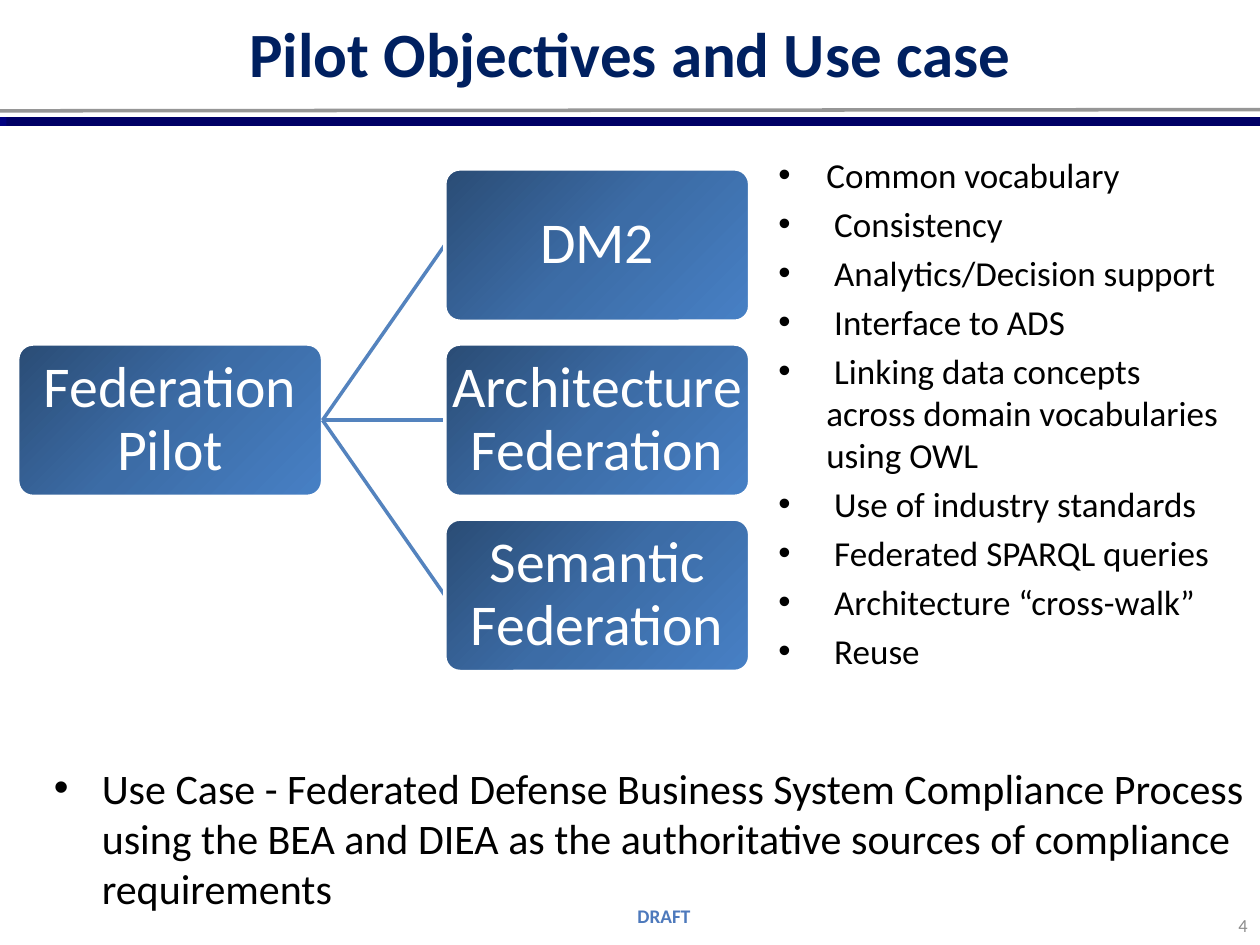
"""Build the pilot objectives slide with its federation tree and bullet lists."""
from dataclasses import dataclass, field

from lxml import etree
from pptx import Presentation
from pptx.dml.color import RGBColor
from pptx.enum.shapes import MSO_CONNECTOR, MSO_SHAPE
from pptx.enum.text import MSO_ANCHOR, PP_ALIGN
from pptx.oxml.ns import qn
from pptx.util import Inches, Pt

RECTANGLE, ROUNDED = MSO_SHAPE.RECTANGLE, MSO_SHAPE.ROUNDED_RECTANGLE
STRAIGHT = MSO_CONNECTOR.STRAIGHT
LEFT, CENTER, RIGHT = PP_ALIGN.LEFT, PP_ALIGN.CENTER, PP_ALIGN.RIGHT
TOP, MIDDLE = MSO_ANCHOR.TOP, MSO_ANCHOR.MIDDLE
LEFT_SIDE, RIGHT_SIDE = 1, 3

WIDTH, HEIGHT = Inches(10), Inches(7.5)
FONT = "Calibri"
COLORS = {
    "title": "002060", "text": "000000", "white": "FFFFFF", "draft": "4D79BC",
    "number": "8C8C8C", "rule": "969696", "bar": "000080", "bar_front": "000066",
    "link": "5483BE",
}
NODE_GRADIENT = {0: "2A4C75", 50: "3C6CA6", 100: "4780C5"}
HANGING = Inches(0.38)
NODE_INSETS = dict.fromkeys(
    ("margin_left", "margin_top", "margin_right", "margin_bottom"), Inches(0.02))


@dataclass(frozen=True)
class Area:
    """Place and size as percentages of the slide."""
    left: float
    top: float
    width: float
    height: float

    def lengths(self) -> tuple:
        """Return left, top, width and height in slide units."""
        return (across(self.left), down(self.top), across(self.width), down(self.height))


@dataclass(frozen=True)
class Label:
    """A block of text with its place and look."""
    area: Area
    lines: tuple
    size: float
    color: str
    bold: bool = False
    align: PP_ALIGN = LEFT
    anchor: MSO_ANCHOR = TOP
    bulleted: bool = False


@dataclass(frozen=True)
class Node:
    """A box of the tree at a column and row of its grid."""
    text: str
    column: int
    row: int
    frame: dict = field(default_factory=lambda: NODE_INSETS)

    def area(self) -> Area:
        """Return the place of the box on the slide."""
        return Area(1.4 + 33.9 * self.column, 17.87 + 18.53 * self.row, 24.2, 16.13)


BARS = ((Area(0, 12.4, 100, 0.93), "bar"), (Area(0.5, 12.4, 99.5, 0.93), "bar_front"))
ROOT = Node("Federation Pilot", 0, 1)
BRANCHES = [Node(text, 1, row) for row, text in enumerate(
    ("DM2", "Architecture Federation", "Semantic Federation"))]
LABELS = (
    Label(Area(39.2, 95.07, 27, 3.87), ("DRAFT",), 11, "draft", True, CENTER),
    Label(Area(0, 0, 100, 11.07), ("Pilot Objectives and Use case",), 36, "title",
          True, CENTER, MIDDLE),
    Label(Area(76.7, 95.73, 23.3, 4.27), ("4",), 10.5, "number", False, RIGHT, MIDDLE),
    Label(Area(60.8, 15.6, 37.5, 61.87), (
        "Common vocabulary",
        " Consistency",
        " Analytics/Decision support",
        " Interface to ADS",
        " Linking data concepts across domain vocabularies using OWL",
        " Use of industry standards",
        " Federated SPARQL queries",
        " Architecture “cross-walk”",
        " Reuse",
    ), 20, "text", bulleted=True),
    Label(Area(3.3, 80, 96.7, 20), (
        "Use Case - Federated Defense Business System Compliance Process using the BEA "
        "and DIEA as the authoritative sources of compliance requirements",
    ), 24, "text", bulleted=True),
)


def across(percent: float) -> int:
    """Convert a share of the slide width."""
    return round(WIDTH * percent / 100)


def down(percent: float) -> int:
    """Convert a share of the slide height."""
    return round(HEIGHT * percent / 100)


def rgb(name: str) -> RGBColor:
    """Look up a named colour."""
    return RGBColor.from_string(COLORS[name])


def apply(target: object, values: dict) -> None:
    """Set each format value on the target."""
    for name, value in values.items():
        setattr(target, name, value)


def write_run(paragraph, text: str, size: float, color: str, bold: bool = False) -> None:
    """Add one formatted run to a paragraph."""
    run = paragraph.add_run()
    run.text = text
    apply(run.font, {"name": FONT, "size": Pt(size), "bold": bold})
    run.font.color.rgb = rgb(color)


def add_bullet(paragraph) -> None:
    """Give a paragraph a round bullet and a hanging indent."""
    properties = paragraph._p.get_or_add_pPr()
    properties.set("marL", str(HANGING))
    properties.set("indent", str(-HANGING))
    etree.SubElement(properties, qn("a:buFont"), typeface="Arial")
    etree.SubElement(properties, qn("a:buChar"), char="•")


def add_label(slide, label: Label) -> None:
    """Draw a text box."""
    frame = slide.shapes.add_textbox(*label.area.lengths()).text_frame
    apply(frame, {"word_wrap": True, "vertical_anchor": label.anchor})
    for index, line in enumerate(label.lines):
        paragraph = frame.add_paragraph() if index else frame.paragraphs[0]
        if label.bulleted:
            add_bullet(paragraph)
        apply(paragraph, {"alignment": label.align,
                          "space_before": Pt(label.size * 0.2 if index else 0)})
        write_run(paragraph, line, label.size, label.color, label.bold)


def add_bar(slide, area: Area, color: str) -> None:
    """Draw a plain filled bar."""
    shape = slide.shapes.add_shape(RECTANGLE, *area.lengths())
    shape.shadow.inherit = False
    shape.fill.solid()
    shape.fill.fore_color.rgb = rgb(color)
    shape.line.fill.background()


def add_line(slide, ends: tuple, color: str):
    """Draw a straight connector without a shadow."""
    connector = slide.shapes.add_connector(STRAIGHT, *ends)
    apply(connector.line, {"width": Pt(2)})
    connector.line.color.rgb = rgb(color)
    etree.SubElement(connector._element.spPr, qn("a:effectLst"))
    return connector


def fill_gradient(shape) -> None:
    """Fill a shape with the diagonal node gradient."""
    shape.fill.gradient()
    gradient = shape._element.spPr.find(qn("a:gradFill"))
    stops = gradient.find(qn("a:gsLst"))
    for stop in list(stops):
        stops.remove(stop)
    for position, color in NODE_GRADIENT.items():
        stop = etree.SubElement(stops, qn("a:gs"), pos=str(position * 1000))
        etree.SubElement(stop, qn("a:srgbClr"), val=color)
    shape.fill.gradient_angle = 315


def add_node(slide, node: Node):
    """Draw one box of the tree."""
    shape = slide.shapes.add_shape(ROUNDED, *node.area().lengths())
    shape.adjustments[0] = 0.1
    shape.shadow.inherit = False
    fill_gradient(shape)
    shape.line.color.rgb = rgb("white")
    shape.line.width = Pt(2)
    frame = shape.text_frame
    apply(frame, {"word_wrap": True, "vertical_anchor": MIDDLE, **node.frame})
    paragraph = frame.paragraphs[0]
    apply(paragraph, {"alignment": CENTER, "line_spacing": 0.9})
    write_run(paragraph, node.text, 33, "white")
    return shape


def add_tree(slide) -> None:
    """Draw the root, its branches and the links behind them."""
    root = add_node(slide, ROOT)
    for branch in BRANCHES:
        shape = add_node(slide, branch)
        link = add_line(slide, (0, 0, 0, 0), "link")
        link.begin_connect(root, RIGHT_SIDE)
        link.end_connect(shape, LEFT_SIDE)
        shape._element.addprevious(link._element)


def main() -> None:
    """Build and save the presentation."""
    presentation = Presentation()
    apply(presentation, {"slide_width": WIDTH, "slide_height": HEIGHT})
    slide = presentation.slides.add_slide(presentation.slide_layouts[6])
    add_line(slide, (across(100), down(11.6), 0, down(11.73)), "rule")
    for area, color in BARS:
        add_bar(slide, area, color)
    add_tree(slide)
    for label in LABELS:
        add_label(slide, label)
    presentation.save("out.pptx")


if __name__ == "__main__":
    main()
